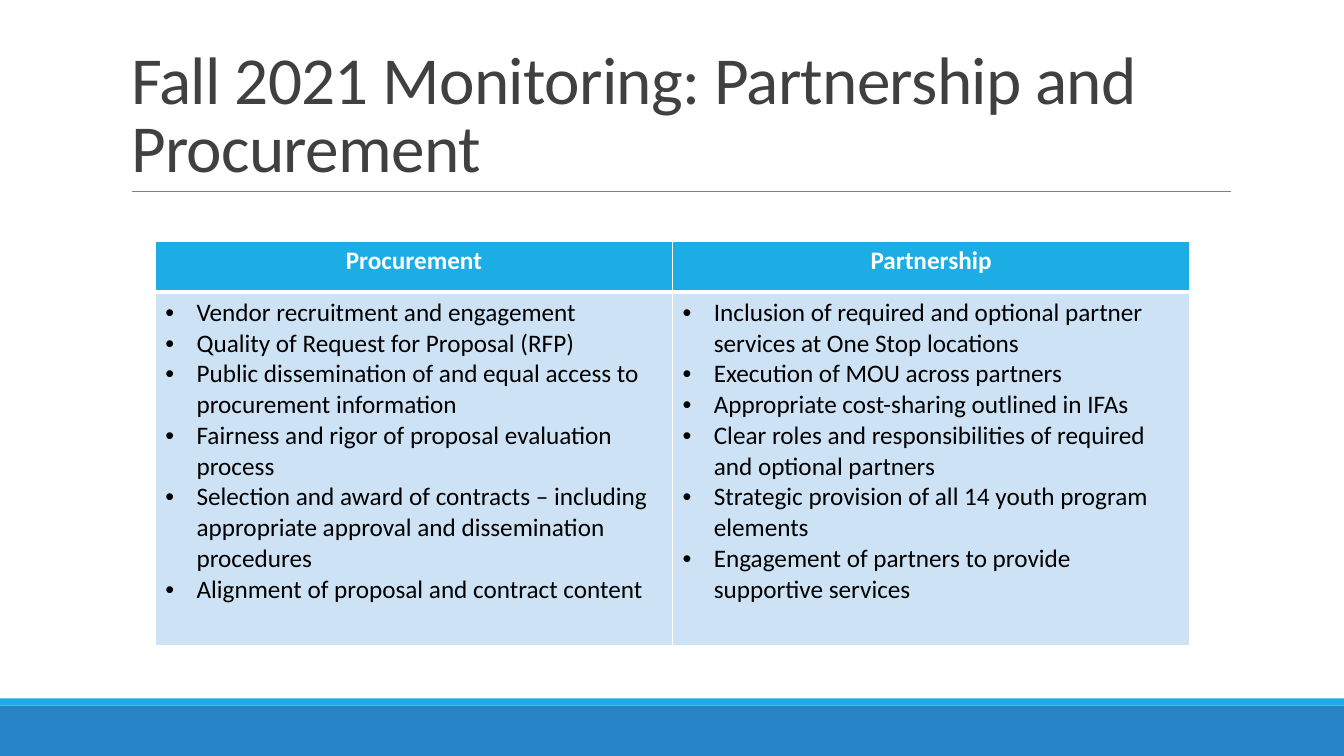
"""Build the slide comparing procurement and partnership monitoring topics."""
from lxml.etree import SubElement
from pptx import Presentation
from pptx.dml.color import RGBColor
from pptx.enum.shapes import MSO_CONNECTOR, MSO_SHAPE
from pptx.enum.text import MSO_ANCHOR, MSO_AUTO_SIZE, PP_ALIGN
from pptx.oxml.ns import qn
from pptx.util import Inches, Pt

COLORS = {
    "band": "2683C6", "accent": "1CADE4", "rule": "808080", "title": "404040",
    "white": "FFFFFF", "body": "CDE3F5", "text": "000000",
}
TOPICS = {
    "Procurement": [
        "Vendor recruitment and engagement",
        "Quality of Request for Proposal (RFP)",
        "Public dissemination of and equal access to procurement information",
        "Fairness and rigor of proposal evaluation process",
        "Selection and award of contracts – including appropriate approval "
        "and dissemination procedures",
        "Alignment of proposal and contract content",
    ],
    "Partnership": [
        "Inclusion of required and optional partner services at One Stop locations",
        "Execution of MOU across partners",
        "Appropriate cost-sharing outlined in IFAs",
        "Clear roles and responsibilities of required and optional partners",
        "Strategic provision of all 14 youth program elements",
        "Engagement of partners to provide supportive services",
    ],
}
COLUMN_WIDTH = Inches(5.13)
ROW_HEIGHTS = [Inches(0.51), Inches(3.5)]
INDENT = Inches(0.31)


def color(name):
    return RGBColor.from_string(COLORS[name])


def style_cell(cell, fill, bottom_width):
    """Give a cell white borders and a solid fill."""
    properties = cell._tc.get_or_add_tcPr()
    for side in "LRTB":
        width = bottom_width if side == "B" else 1
        border = SubElement(properties, qn(f"a:ln{side}"), w=str(Pt(width)))
        solid = SubElement(border, qn("a:solidFill"))
        SubElement(solid, qn("a:srgbClr"), val=COLORS["white"])
    cell.fill.solid()
    cell.fill.fore_color.rgb = color(fill)


deck = Presentation()
deck.slide_width, deck.slide_height = Inches(13.33), Inches(7.5)
page = deck.slides.add_slide(deck.slide_layouts[5])

for name, top, height in [("band", 7, 0.5), ("accent", 6.93, 0.07)]:
    bar = page.shapes.add_shape(
        MSO_SHAPE.RECTANGLE, 0, Inches(top), deck.slide_width, Inches(height))
    bar.shadow.inherit = False
    bar.fill.solid()
    bar.fill.fore_color.rgb = color(name)
    bar.line.fill.background()

rule = page.shapes.add_connector(
    MSO_CONNECTOR.STRAIGHT, Inches(1.31), Inches(1.9), Inches(12.21), Inches(1.9))
rule.line.color.rgb = color("rule")
rule.line.width = Pt(0.5)
SubElement(rule._element.spPr, qn("a:effectLst"))

title = page.shapes.title
title.left, title.top = Inches(1.2), Inches(0.31)
title.width, title.height = Inches(11), Inches(1.59)
frame = title.text_frame
frame.text = "Fall 2021 Monitoring: Partnership and Procurement"
frame.word_wrap = True
frame.auto_size = MSO_AUTO_SIZE.NONE
frame.vertical_anchor = MSO_ANCHOR.BOTTOM
heading = frame.paragraphs[0]
heading.alignment = PP_ALIGN.LEFT
heading.line_spacing = 0.85
heading.font.name, heading.font.size = "Calibri", Pt(48)
heading.font.color.rgb = color("title")
heading.runs[0].font._element.set("spc", "-50")

table = page.shapes.add_table(
    len(ROW_HEIGHTS), len(TOPICS), Inches(1.54), Inches(2.39),
    COLUMN_WIDTH * len(TOPICS), sum(ROW_HEIGHTS)).table
for row, height in zip(table.rows, ROW_HEIGHTS):
    row.height = height

for column, (topic, points) in enumerate(TOPICS.items()):
    table.columns[column].width = COLUMN_WIDTH
    header, body = table.cell(0, column), table.cell(1, column)
    style_cell(header, "accent", 3)
    style_cell(body, "body", 1)
    header.text = topic
    body.text = "\n".join(points)
    for cell, ink in [(header, "white"), (body, "text")]:
        for para in cell.text_frame.paragraphs:
            para.font.name, para.font.size = "Calibri", Pt(18)
            para.font.bold = cell is header
            para.font.color.rgb = color(ink)
    header.text_frame.paragraphs[0].alignment = PP_ALIGN.CENTER
    for para in body.text_frame.paragraphs:
        properties = para._p.get_or_add_pPr()
        properties.set("marL", str(INDENT))
        properties.set("indent", str(-INDENT))
        bullet_font = properties.makeelement(qn("a:buFont"), {"typeface": "Arial"})
        bullet = properties.makeelement(qn("a:buChar"), {"char": "•"})
        properties.insert(0, bullet_font)
        properties.insert(1, bullet)

deck.save("out.pptx")
